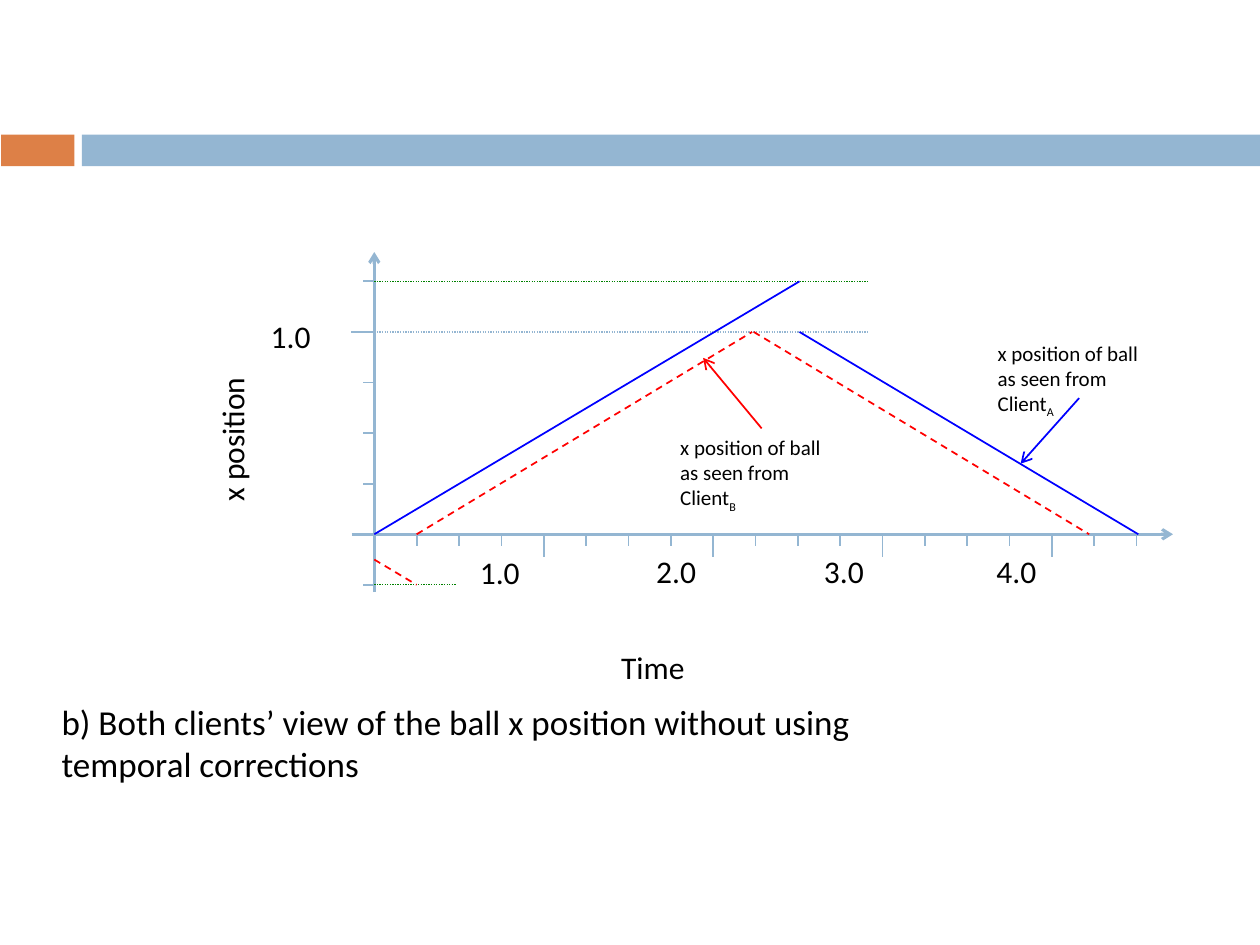
from pptx import Presentation
from pptx.dml.color import RGBColor
from pptx.enum.dml import MSO_LINE
from pptx.enum.shapes import MSO_CONNECTOR, MSO_SHAPE
from pptx.enum.text import MSO_ANCHOR, MSO_AUTO_SIZE
from pptx.oxml.ns import qn
from pptx.util import Pt
from lxml.etree import SubElement

COLORS = {"orange": "DD8047", "axis": "94B6D2", "blue": "0000FF",
          "red": "FF0000", "green": "008000", "text": "000000"}
FONT = "Calibri"

# Content: left, top, width, height in points
BANDS = [("orange", 0.7, 77, 41.8, 18), ("axis", 46.8, 77, 673.2, 18)]
LABELS = [  # text, frame, size, rotation
    ("Time", (347.8, 366.5, 73.4, 28.8), 18, 0),
    ("1.0", (147.6, 177.8, 46, 28.8), 18, 0),
    ("x position", (85, 231.8, 95, 28.8), 18, 270),
    ("1.0", (267.1, 312.5, 56.9, 28.8), 18, 0),
    ("2.0", (367.9, 311.8, 56.9, 28.8), 18, 0),
    ("3.0", (463.7, 311.8, 56.9, 28.8), 18, 0),
    ("4.0", (562.3, 311.8, 56.9, 28.8), 18, 0),
    ("b) Both clients’ view of the ball x position without using temporal corrections",
     (28.1, 396.7, 541.4, 55.4), 20, 0),
]
NOTES = [  # client, frame, side of the box, arrow tip, color
    ("B", (381.6, 244.8, 107.3, 36.7), 0, (401.8, 204.5), "red"),
    ("A", (563, 190.8, 107.3, 36.7), 2, (583.2, 265), "blue"),
]
NOTE_TEXT = "x position of ball as seen from Client"

# Plotted data: (time, x position) from and to
GUIDES = [("axis", (0, 1), (2.92, 1)), ("green", (0, 1.25), (2.92, 1.25)),
          ("green", (0, -0.25), (0.48, -0.25)), ("axis", (0, 0), (3.97, 0))]
TRACKS = [
    ("blue", (0, 0), (2.51, 1.25), None),
    ("blue", (2.51, 1), (4.51, 0), None),
    ("red", (0.25, 0), (2.23, 1), MSO_LINE.DASH),
    ("red", (2.24, 1), (4.22, 0), MSO_LINE.DASH),
    ("red", (0, -0.125), (0.25, -0.25), MSO_LINE.DASH),
]

# Scale of the graph
ORIGIN_X, ORIGIN_Y = 213.9, 305.3
TIME_UNIT, POSITION_UNIT = 96.8, 115.6
MINOR, MAJOR = 6.6, 13.2


def place(point):
    time, position = point
    return ORIGIN_X + time * TIME_UNIT, ORIGIN_Y - position * POSITION_UNIT


def color(name):
    return RGBColor.from_string(COLORS[name])


def add_line(page, start, end, name, width=1, dash=None, arrow=False):
    line = page.shapes.add_connector(
        MSO_CONNECTOR.STRAIGHT, *(Pt(value) for value in (*start, *end)))
    line.line.color.rgb = color(name)
    line.line.width = Pt(width)
    if dash:
        line.line.dash_style = dash
    properties = line.line._get_or_add_ln()
    if arrow:
        SubElement(properties, qn("a:tailEnd"), type="arrow")
    SubElement(properties.getparent(), qn("a:effectLst"))
    return line


def add_text(page, spans, frame, size, rotation=0):
    box = page.shapes.add_textbox(*(Pt(value) for value in frame))
    box.rotation = rotation
    text = box.text_frame
    text.word_wrap = True
    text.auto_size = MSO_AUTO_SIZE.NONE
    text.vertical_anchor = MSO_ANCHOR.TOP
    para = text.paragraphs[0]
    for words, baseline in spans:
        span = para.add_run()
        span.text = words
        span.font.name = FONT
        span.font.size = Pt(size)
        span.font.color.rgb = color("text")
        if baseline:
            span.font._element.set("baseline", str(baseline))
    return box


deck = Presentation()
deck.slide_width, deck.slide_height = Pt(720), Pt(540)
page = deck.slides.add_slide(deck.slide_layouts[6])

# Header bands
for name, *frame in BANDS:
    band = page.shapes.add_shape(MSO_SHAPE.RECTANGLE, *(Pt(value) for value in frame))
    band.shadow.inherit = False
    band.fill.solid()
    band.fill.fore_color.rgb = color(name)
    band.line.fill.background()

# Axes
add_line(page, (200.9, ORIGIN_Y), (670.3, ORIGIN_Y), "axis", 1.75, arrow=True)
add_line(page, (ORIGIN_X, 338.4), (ORIGIN_X, 144), "axis", 1.75, arrow=True)

# Ticks every quarter, longer on whole numbers
for quarter in range(1, 19):
    x, y = place((quarter / 4, 0))
    add_line(page, (x, y), (x, y + (MINOR if quarter % 4 else MAJOR)), "axis")
for quarter in range(-1, 6):
    x, y = place((0, quarter / 4))
    add_line(page, (x, y), (x - (MAJOR if quarter == 4 else MINOR), y), "axis")

# Guides and ball tracks
for name, start, end in GUIDES:
    add_line(page, place(start), place(end), name, 0.75, MSO_LINE.ROUND_DOT)
for name, start, end, dash in TRACKS:
    add_line(page, place(start), place(end), name, dash=dash)

# Axis labels and caption
for words, frame, size, rotation in LABELS:
    add_text(page, [(words, None)], frame, size, rotation)

# Notes with arrows to the tracks
for client, frame, side, tip, name in NOTES:
    box = add_text(page, [(NOTE_TEXT, None), (client, -25000)], frame, 12)
    left, top, width, height = frame
    start = (left + width / 2, top if side == 0 else top + height)
    add_line(page, start, tip, name, arrow=True).begin_connect(box, side)

deck.save("out.pptx")
